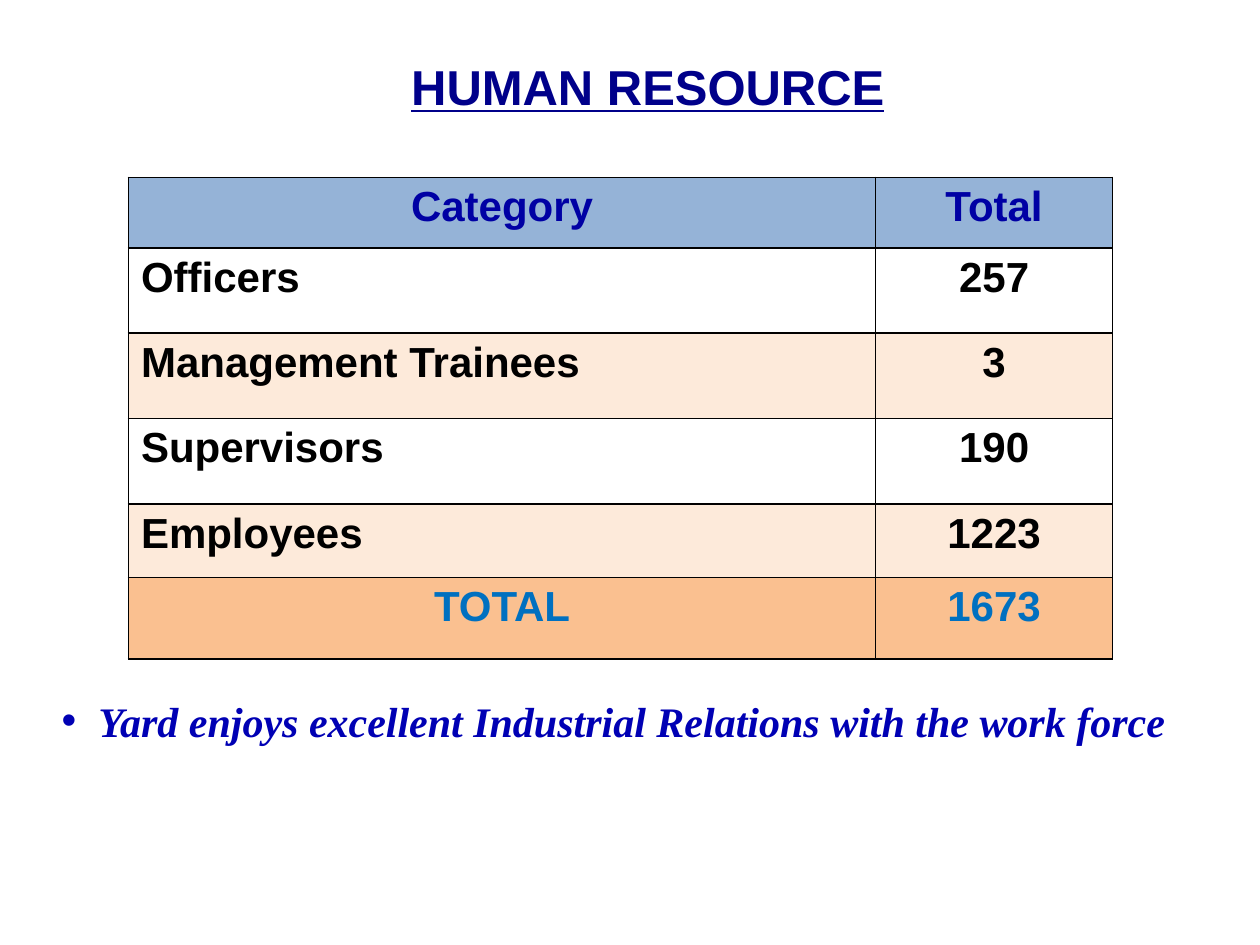
import pptx
import pptx.util
import pptx.dml.color
import pptx.enum.text
import pptx.oxml
import pptx.oxml.ns

Pt = pptx.util.Pt
ALIGN = pptx.enum.text.PP_ALIGN
ANCHOR = pptx.enum.text.MSO_ANCHOR
NS = pptx.oxml.ns.nsdecls("a")


def color(code):
    return pptx.dml.color.RGBColor.from_string(code)


class Deck:
    font = "Arial"
    size = 24
    edge = "000000"

    def __init__(self, width, height):
        self.prs = pptx.Presentation()
        self.prs.slide_width, self.prs.slide_height = Pt(width), Pt(height)
        self.slide = self.prs.slides.add_slide(self.prs.slide_layouts[6])

    def add_text(self, para, text, ink, align=ALIGN.LEFT, size=None,
                 font=None, line=False, slant=False):
        para.alignment = align
        run = para.add_run()
        run.text = text
        face = run.font
        face.name, face.size = font or self.font, Pt(size or self.size)
        face.bold, face.italic, face.underline = True, slant, line
        face.color.rgb = color(ink)

    def label(self, box, text, ink, anchor=ANCHOR.TOP, **style):
        frame = self.slide.shapes.add_textbox(*map(Pt, box)).text_frame
        frame.word_wrap = True
        frame.vertical_anchor = anchor
        para = frame.paragraphs[0]
        self.add_text(para, text, ink, **style)
        return para

    def bullet(self, box, text, ink, indent, **style):
        props = self.label(box, text, ink, **style)._p.get_or_add_pPr()
        props.set("marL", str(Pt(indent)))
        props.set("indent", str(-Pt(indent)))
        for part in (f'<a:spcBef {NS}><a:spcPct val="50000"/></a:spcBef>',
                     f'<a:buFont {NS} typeface="Arial"/>',
                     f'<a:buChar {NS} char="•"/>'):
            props.append(pptx.oxml.parse_xml(part))

    def border(self, cell):
        props = cell._tc.get_or_add_tcPr()
        for spot, side in enumerate(("lnL", "lnR", "lnT", "lnB")):
            props.insert(spot, pptx.oxml.parse_xml(
                f'<a:{side} {NS} w="{Pt(1)}"><a:solidFill>'
                f'<a:srgbClr val="{self.edge}"/></a:solidFill></a:{side}>'))

    def table(self, left, top, cols, heights, rows):
        grid = self.slide.shapes.add_table(
            len(rows), len(cols), Pt(left), Pt(top),
            Pt(sum(cols)), Pt(sum(heights))).table
        for col, width in zip(grid.columns, cols):
            col.width = Pt(width)
        for y, (texts, ink, fill, first) in enumerate(rows):
            grid.rows[y].height = Pt(heights[y])
            for x, text in enumerate(texts):
                cell = grid.cell(y, x)
                if fill:
                    cell.fill.solid()
                    cell.fill.fore_color.rgb = color(fill)
                else:
                    cell.fill.background()
                self.border(cell)
                self.add_text(cell.text_frame.paragraphs[0], text, ink,
                              ALIGN.CENTER if x else first)


def main():
    deck = Deck(720, 540)

    # Title
    deck.label((50.4, 22.3, 639.4, 54), "HUMAN RESOURCE", "00008A",
               ANCHOR.MIDDLE, align=ALIGN.CENTER, size=28, line=True)

    # Staff table: head, banded body, total
    staff = [("Officers", "257"), ("Management Trainees", "3"),
             ("Supervisors", "190"), ("Employees", "1223")]
    rows = [(("Category", "Total"), "0000A4", "95B3D7", ALIGN.CENTER)]
    rows += [(pair, "000000", "FDEADA" if i % 2 else None, ALIGN.LEFT)
             for i, pair in enumerate(staff)]
    rows.append((("TOTAL", "1673"), "0070C0", "FAC090", ALIGN.CENTER))
    deck.table(73.4, 101.3, (427, 135.4),
               (40.3, 48.8, 48.8, 48.8, 42, 46.7), rows)

    # Closing remark
    deck.bullet((28.1, 393.8, 671.8, 36),
                "Yard enjoys excellent Industrial Relations with the work force",
                "0000B4", 21, font="Times New Roman", slant=True)

    deck.prs.save("out.pptx")


if __name__ == "__main__":
    main()
